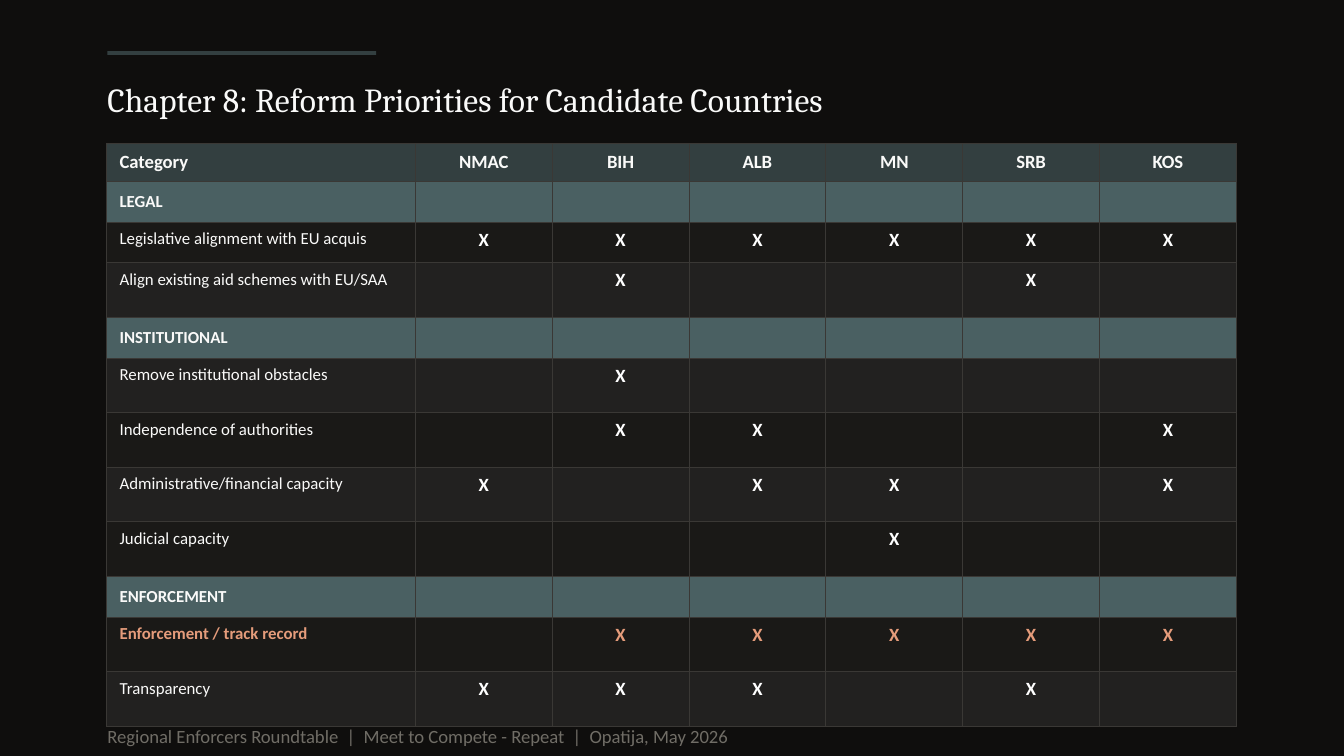
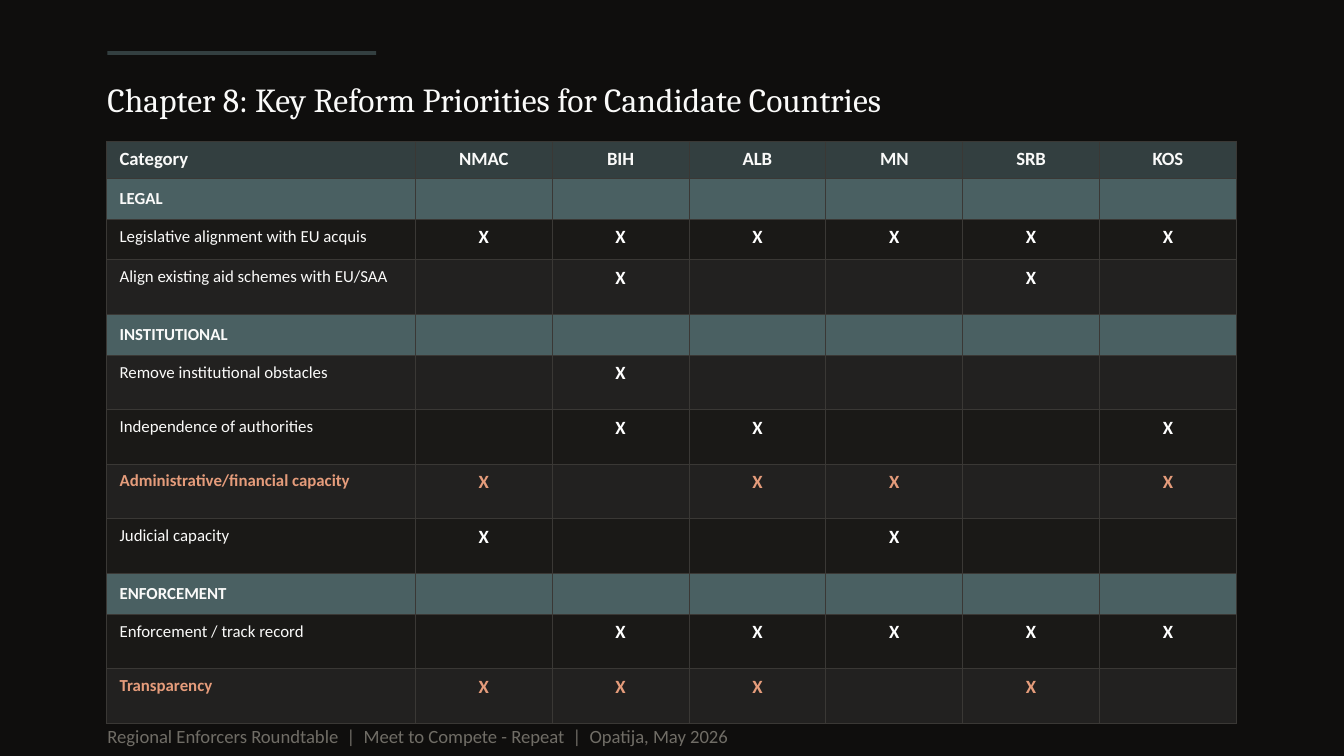
from lxml import etree
from pptx import Presentation
from pptx.dml.color import RGBColor
from pptx.enum import shapes, text
from pptx.oxml import ns
from pptx.util import Inches, Pt

# Content
COUNTRIES = ["NMAC", "BIH", "ALB", "MN", "SRB", "KOS"]
ALL = " ".join(COUNTRIES)
PRIORITIES = [  # label, countries marked; None makes a section row
    ("LEGAL", None),
    ("Legislative alignment with EU acquis", ALL),
    ("Align existing aid schemes with EU/SAA", "BIH SRB"),
    ("INSTITUTIONAL", None),
    ("Remove institutional obstacles", "BIH"),
    ("Independence of authorities", "BIH ALB KOS"),
    ("Administrative/financial capacity", "NMAC ALB MN KOS"),
    ("Judicial capacity", "MN"),
    ("ENFORCEMENT", None),
    ("Enforcement / track record", "BIH ALB MN SRB KOS"),
    ("Transparency", "NMAC BIH ALB SRB"),
]
SLIDES = [
    {"title": "Chapter 8: Reform Priorities for Candidate Countries",
     "table_top": 1.07,
     "highlights": ["Enforcement / track record"],
     "changes": {}},
    {"title": "Chapter 8: Key Reform Priorities for Candidate Countries",
     "table_top": 1.05,
     "highlights": ["Administrative/financial capacity", "Transparency"],
     "changes": {"Judicial capacity": "NMAC MN"}},
]
FOOTER = "Regional Enforcers Roundtable  |  Meet to Compete - Repeat  |  Opatija, May 2026"

# Shared style
BACKGROUND, HEADER, SECTION = "0F0E0D", "333F40", "4A6062"
STRIPES = ["1A1917", "222120"]
BORDER, MUTED, ACCENT = "3A3835", "706D66", "E59C7B"
LIGHT, WHITE = "FAFAF9", "FFFFFF"
HEADING_FONT, BODY_FONT = "Cambria", "Calibri"
LEFT, WIDTH = 0.8, 8.4
TABLE_LEFT, TABLE_WIDTH, LABEL_WIDTH = 0.79, 8.41, 2.3
# Row heights in points
HEADER_HEIGHT, SECTION_HEIGHT, FULL_HEIGHT, ROW_HEIGHT = 20, 22, 21.6, 29.2


def color(value):
    return RGBColor.from_string(value)


def write(frame, words, size, ink, bold=False, font=BODY_FONT, align=None):
    frame.text = words
    paragraph = frame.paragraphs[0]
    paragraph.alignment = align
    run_font = paragraph.runs[0].font
    run_font.name, run_font.size, run_font.bold = font, Pt(size), bold
    run_font.color.rgb = color(ink)


def add_label(slide, top, height, words, size, ink, font):
    box = slide.shapes.add_textbox(Inches(LEFT), Inches(top), Inches(WIDTH), Inches(height))
    frame = box.text_frame
    frame.word_wrap = True
    frame.vertical_anchor = text.MSO_ANCHOR.MIDDLE
    frame.margin_left = frame.margin_top = frame.margin_right = frame.margin_bottom = 0
    write(frame, words, size, ink, font=font)


def style_cell(cell, fill):
    properties = cell._tc.get_or_add_tcPr()
    for side in ("lnL", "lnR", "lnT", "lnB"):
        line = etree.SubElement(properties, ns.qn(f"a:{side}"), w=str(Pt(0.5)))
        solid = etree.SubElement(line, ns.qn("a:solidFill"))
        etree.SubElement(solid, ns.qn("a:srgbClr"), val=BORDER)
    cell.fill.solid()
    cell.fill.fore_color.rgb = color(fill)


def add_row(table, index, height, fill, label, marks, label_style, mark_style):
    """Fill one row: a label, then a centred entry for each country."""
    table.rows[index].height = Pt(height)
    for column, words in enumerate([label] + marks):
        cell = table.cell(index, column)
        style_cell(cell, fill)
        if words and column == 0:
            write(cell.text_frame, words, *label_style)
        elif words:
            write(cell.text_frame, words, *mark_style, align=text.PP_ALIGN.CENTER)


def add_priorities(slide, top, highlights, changes):
    rows, columns = len(PRIORITIES) + 1, len(COUNTRIES) + 1
    table = slide.shapes.add_table(rows, columns, Inches(TABLE_LEFT), Inches(top),
                                   Inches(TABLE_WIDTH), Pt(ROW_HEIGHT * rows)).table
    table.first_row = table.horz_banding = False
    country_width = (TABLE_WIDTH - LABEL_WIDTH) / len(COUNTRIES)
    for index, column in enumerate(table.columns):
        column.width = Inches(country_width if index else LABEL_WIDTH)

    heading = (10, LIGHT, True)
    add_row(table, 0, HEADER_HEIGHT, HEADER, "Category", COUNTRIES, heading, heading)
    for index, (label, marked) in enumerate(PRIORITIES, 1):
        if marked is None:
            add_row(table, index, SECTION_HEIGHT, SECTION, label, [""] * len(COUNTRIES),
                    (9, LIGHT, True), heading)
            for cell in table.rows[index].cells:
                cell.margin_top = cell.margin_bottom = 0
                cell.vertical_anchor = text.MSO_ANCHOR.MIDDLE
            continue
        marked = changes.get(label, marked).split()
        marks = ["X" if country in marked else "" for country in COUNTRIES]
        strong = label in highlights
        add_row(table, index, FULL_HEIGHT if all(marks) else ROW_HEIGHT,
                STRIPES[index % 2], label, marks,
                (9, ACCENT if strong else LIGHT, strong),
                (10, ACCENT if strong else WHITE, True))


def add_slide(presentation, content):
    slide = presentation.slides.add_slide(presentation.slide_layouts[6])
    slide.background.fill.solid()
    slide.background.fill.fore_color.rgb = color(BACKGROUND)
    # Accent bar and title
    bar = slide.shapes.add_shape(shapes.MSO_SHAPE.RECTANGLE, Inches(LEFT), Inches(0.38),
                                 Inches(2), Inches(0.03))
    bar.shadow.inherit = False
    bar.fill.solid()
    bar.fill.fore_color.rgb = color(HEADER)
    bar.line.fill.background()
    add_label(slide, 0.44, 0.6, content["title"], 18, LIGHT, HEADING_FONT)
    # Table and footer
    add_priorities(slide, content["table_top"], content["highlights"], content["changes"])
    add_label(slide, 5.36, 0.24, FOOTER, 10, MUTED, BODY_FONT)


def main():
    presentation = Presentation()
    # Widescreen, 16:9
    presentation.slide_width = Inches(10)
    presentation.slide_height = Inches(10) * 9 // 16
    for content in SLIDES:
        add_slide(presentation, content)
    presentation.save("out.pptx")


if __name__ == "__main__":
    main()
